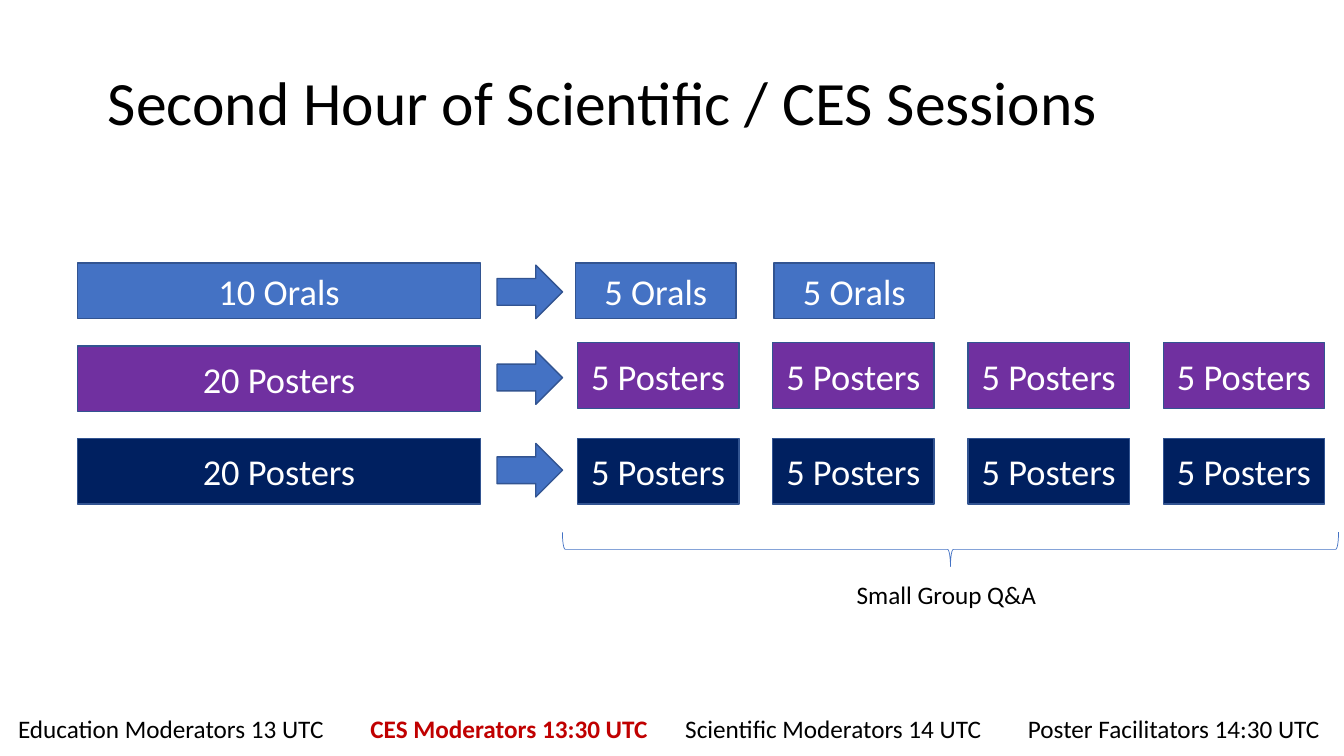
import pptx
import pptx.util
import pptx.dml.color
import pptx.enum.shapes
import pptx.enum.text

Pt = pptx.util.Pt
SHAPE = pptx.enum.shapes.MSO_SHAPE
ALIGN = pptx.enum.text.PP_ALIGN
ANCHOR = pptx.enum.text.MSO_ANCHOR

COLORS = {
    "blue": "4472C4",
    "purple": "7030A0",
    "navy": "002060",
    "outline": "325491",
    "red": "C00000",
    "black": "000000",
    "white": "FFFFFF",
}


def rgb(name):
    return pptx.dml.color.RGBColor.from_string(COLORS[name])


def write(shape, text, size, color, bold=False):
    paragraph = shape.text_frame.paragraphs[0]
    paragraph.text = text
    paragraph.font.name = "Calibri"
    paragraph.font.size = Pt(size)
    paragraph.font.bold = bold
    paragraph.font.color.rgb = rgb(color)
    return paragraph


def add_title(slide, text):
    title = slide.shapes.title
    title.left, title.top, title.width, title.height = Pt(69.8), Pt(23), Pt(828), Pt(104.4)
    title.text_frame.vertical_anchor = ANCHOR.MIDDLE
    paragraph = write(title, text, 44, "black")
    paragraph.alignment = ALIGN.LEFT
    paragraph.line_spacing = 0.9


def add_label(slide, text, left, top, width, color="black", bold=False):
    label = slide.shapes.add_textbox(Pt(left), Pt(top), Pt(width), Pt(29))
    label.text_frame.word_wrap = False
    write(label, text, 18, color, bold)


def add_filled(slide, kind, left, top, width, height, fill):
    shape = slide.shapes.add_shape(kind, Pt(left), Pt(top), Pt(width), Pt(height))
    shape.shadow.inherit = False
    shape.fill.solid()
    shape.fill.fore_color.rgb = rgb(fill)
    shape.line.color.rgb = rgb("outline")
    shape.line.width = Pt(1)
    return shape


def add_box(slide, text, left, top, width, height, fill):
    box = add_filled(slide, SHAPE.RECTANGLE, left, top, width, height, fill)
    box.text_frame.vertical_anchor = ANCHOR.MIDDLE
    write(box, text, 26, "white").alignment = ALIGN.CENTER


def add_arrow(slide, top):
    add_filled(slide, SHAPE.RIGHT_ARROW, 355, top, 46.8, 38.2, "blue")


def add_brace(slide):
    brace = slide.shapes.add_shape(
        SHAPE.LEFT_BRACE, Pt(666.7), Pt(115.2), Pt(24.5), Pt(554.4))
    brace.rotation = 270
    brace.shadow.inherit = False
    brace.fill.background()
    brace.line.color.rgb = rgb("blue")
    brace.line.width = Pt(0.5)


def add_session_row(slide, whole, group, count, fill, height,
                    whole_top, arrow_top, group_top, group_left, group_width, step):
    add_box(slide, whole, 55.4, whole_top, 288, height, fill)
    add_arrow(slide, arrow_top)
    for index in range(count):
        add_box(slide, group, group_left + index * step, group_top,
                group_width, height, fill)


def main():
    presentation = pptx.Presentation()
    presentation.slide_width = Pt(960)
    presentation.slide_height = Pt(540)
    slide = presentation.slides.add_slide(presentation.slide_layouts[5])

    add_title(slide, "Second Hour of Scientific / CES Sessions")

    add_session_row(slide, "10 Orals", "5 Orals", 2, "blue", 39.6,
                    187.9, 189.4, 187.9, 411.1, 114.8, 141.8)
    add_session_row(slide, "20 Posters", "5 Posters", 4, "purple", 46.8,
                    247, 250.6, 244.8, 412.4, 115.4, 139.5)
    add_session_row(slide, "20 Posters", "5 Posters", 4, "navy", 46.8,
                    313.2, 316.8, 313.2, 412.4, 115.4, 139.5)

    add_brace(slide)
    add_label(slide, "Small Group Q&A", 604.8, 410.4, 144)

    footer_top = 506.2
    add_label(slide, "Education Moderators 13 UTC", 5.8, footer_top, 238.3)
    add_label(slide, "CES Moderators 13:30 UTC", 257.5, footer_top, 214, "red", True)
    add_label(slide, "Scientific Moderators 14 UTC", 482.4, footer_top, 232.6)
    add_label(slide, "Poster Facilitators 14:30 UTC", 727.2, footer_top, 228.2)

    presentation.save("out.pptx")


if __name__ == "__main__":
    main()
